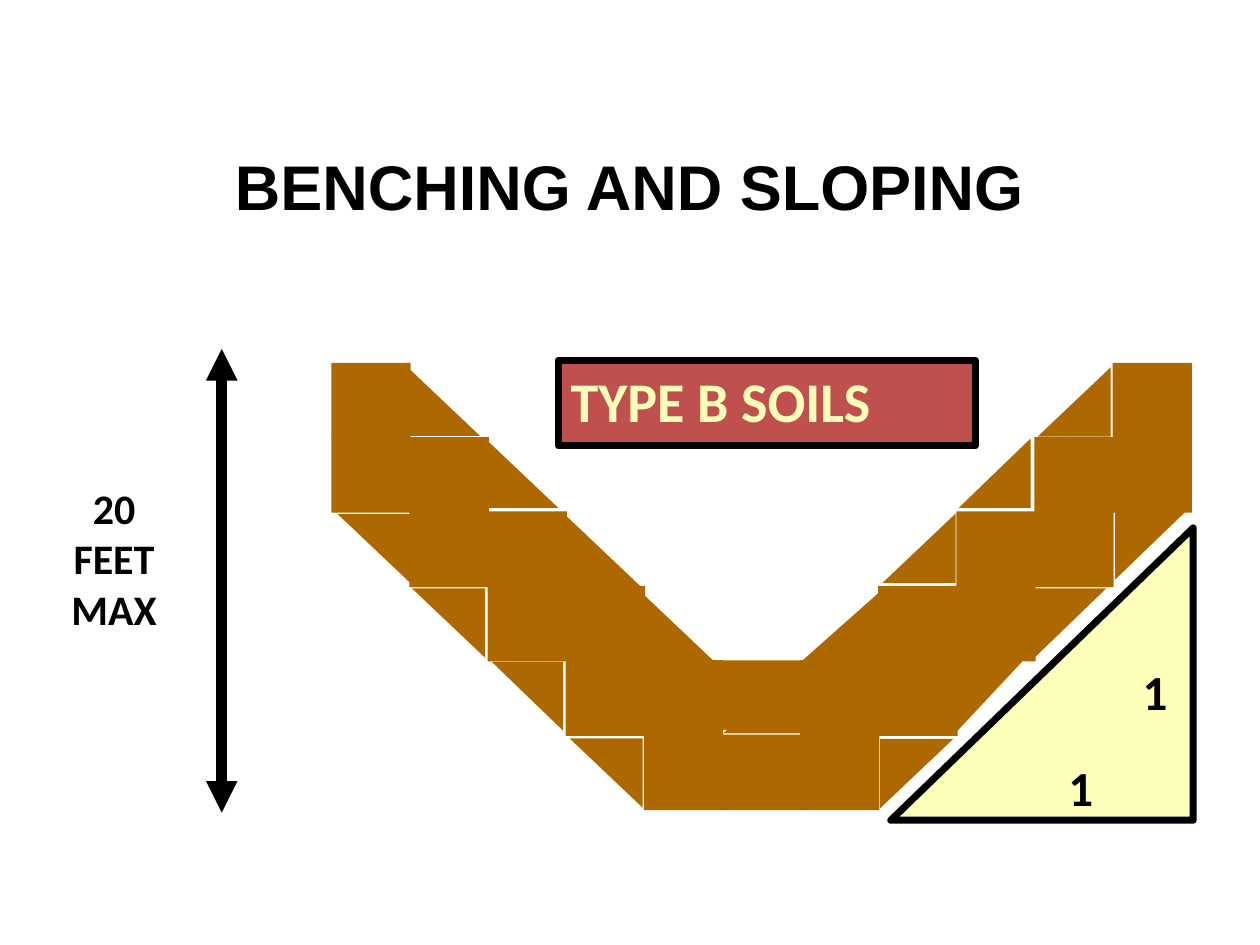
import pptx
import pptx.util
import pptx.dml.color
import pptx.enum.shapes
import pptx.enum.text
import pptx.oxml
import pptx.oxml.ns

PX = 9144
COLORS = {"ink": "000000", "soil": "AD6900", "cream": "FCFEB9", "label": "C0504D"}
SHAPES = pptx.enum.shapes.MSO_SHAPE
ALIGN = pptx.enum.text.PP_ALIGN
ANCHOR = pptx.enum.text.MSO_ANCHOR

LEFT, TOP = 263, 288
COLUMN_STEP, ROW_STEP = 62, 59
BENCH_ROWS = [(0, 10), (0, 1, 9, 10), (1, 2, 8, 9), (2, 3, 7, 8), (3, 4, 6, 7), (4, 5, 6)]
SLOPES = {
    180: [(452, 586, 58, 55), (327, 467, 58, 55), (390, 525, 57, 55), (268, 408, 58, 55)],
    90: [(700, 585, 55, 58), (756, 522, 62, 58), (822, 466, 55, 57), (886, 404, 55, 57)],
    0: [(323, 291, 58, 55), (450, 410, 58, 55), (511, 472, 58, 55), (385, 348, 58, 55),
        (569, 524, 58, 55)],
    270: [(825, 290, 55, 58), (762, 347, 55, 57), (702, 406, 55, 58), (640, 466, 55, 62),
          (577, 524, 55, 61)],
}


class Diagram:
    """Draws styled elements on the current slide."""

    def __init__(self, slide):
        self.slide = slide

    def color(self, name):
        return pptx.dml.color.RGBColor.from_string(COLORS[name])

    def lengths(self, box):
        return [pptx.util.Emu(length * PX) for length in box]

    def block(self, kind, box, fill, border=0, rotation=0):
        block = self.slide.shapes.add_shape(kind, *self.lengths(box))
        block.shadow.inherit = False
        block.rotation = rotation
        block.fill.solid()
        block.fill.fore_color.rgb = self.color(fill)
        if border:
            block.line.color.rgb = self.color("ink")
            block.line.width = pptx.util.Pt(border)
        else:
            block.line.fill.background()
        return block

    def letter(self, holder, lines, size, font="Calibri", color="ink", align=ALIGN.LEFT,
               anchor=ANCHOR.TOP, spacing=1.0):
        frame = holder.text_frame
        frame.word_wrap = True
        frame.vertical_anchor = anchor
        frame.text = "\n".join(lines)
        style = {"name": font, "size": pptx.util.Pt(size), "bold": True}
        for paragraph in frame.paragraphs:
            paragraph.alignment = align
            paragraph.line_spacing = spacing
            for attribute, value in style.items():
                setattr(paragraph.font, attribute, value)
            paragraph.font.color.rgb = self.color(color)

    def text(self, box, lines, size, **style):
        self.letter(self.slide.shapes.add_textbox(*self.lengths(box)), lines, size, **style)

    def double_arrow(self, ends, width):
        arrow = self.slide.shapes.add_connector(
            pptx.enum.shapes.MSO_CONNECTOR.STRAIGHT, *self.lengths(ends))
        arrow.line.color.rgb = self.color("ink")
        arrow.line.width = pptx.util.Pt(width)
        outline = arrow.line.fill._xPr
        for tag in ("a:headEnd", "a:tailEnd"):
            tip = pptx.oxml.parse_xml(f'<{tag} {pptx.oxml.ns.nsdecls("a")} type="triangle"/>')
            outline.append(tip)
        effects = pptx.oxml.parse_xml(f'<a:effectLst {pptx.oxml.ns.nsdecls("a")}/>')
        outline.addnext(effects)


def main():
    deck = pptx.Presentation()
    deck.slide_width = pptx.util.Inches(10)
    deck.slide_height = pptx.util.Inches(7.5)
    diagram = Diagram(deck.slides.add_slide(deck.slide_layouts[6]))

    diagram.text((108, 88, 783, 125), ["BENCHING AND SLOPING"], 36, font="Arial",
                 align=ALIGN.CENTER, anchor=ANCHOR.MIDDLE, spacing=0.9)
    diagram.text((38, 378, 105, 130), ["20", "FEET", "MAX"], 24, align=ALIGN.CENTER)
    diagram.double_arrow((176, 277, 176, 645), 6)

    diagram.block(SHAPES.RIGHT_TRIANGLE, (711, 415, 232, 240), "cream", 4, 270)
    for ratio_box in [(838, 596, 42, 57), (897, 520, 42, 57)]:
        diagram.text(ratio_box, ["1"], 28)
    soil_label = diagram.block(SHAPES.RECTANGLE, (443, 286, 331, 68), "label", 4)
    diagram.letter(soil_label, ["TYPE B SOILS"], 32, color="cream")

    for row, columns in enumerate(BENCH_ROWS):
        for column in columns:
            bench = (LEFT + column * COLUMN_STEP, TOP + row * ROW_STEP, 63, 60)
            diagram.block(SHAPES.RECTANGLE, bench, "soil")
    for rotation, boxes in SLOPES.items():
        for box in boxes:
            diagram.block(SHAPES.RIGHT_TRIANGLE, box, "soil", rotation=rotation)
    diagram.block(SHAPES.RECTANGLE, (566, 524, 69, 55), "soil")

    deck.save("out.pptx")


if __name__ == "__main__":
    main()
